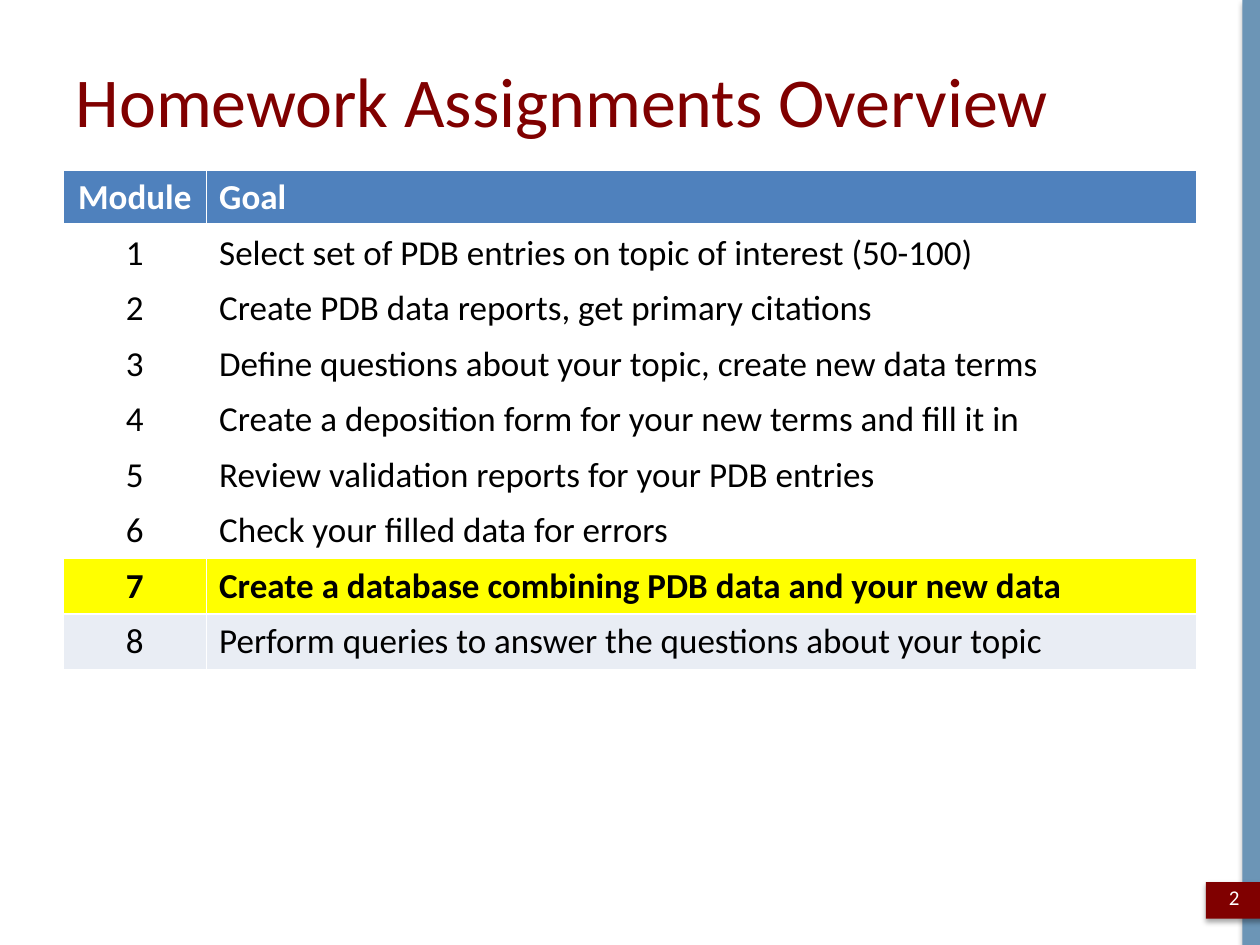
from dataclasses import dataclass
from typing import Optional

from lxml.etree import SubElement
from pptx import Presentation
from pptx.dml.color import RGBColor
from pptx.enum.shapes import MSO_SHAPE as Preset
from pptx.enum.text import MSO_ANCHOR as Anchor, PP_ALIGN as Align
from pptx.oxml.ns import qn
from pptx.util import Inches, Pt

FONT = "Calibri"
COLORS = {
    "maroon": "800000",
    "side_blue": "6C95B6",
    "header_blue": "4F81BD",
    "highlight": "FFFF00",
    "pale": "E9EDF4",
    "white": "FFFFFF",
    "black": "000000",
}


@dataclass(frozen=True)
class Block:
    left: float
    top: float
    width: float
    height: float
    color: str


@dataclass(frozen=True)
class Row:
    module: str
    goal: str
    fill: Optional[str] = None
    color: str = "black"
    bold: bool = False
    bottom_line: float = 1


BLOCKS = [
    Block(9.86, 0, 0.14, 7.5, "side_blue"),
    Block(9.57, 7, 0.48, 0.29, "maroon"),
]
ROWS = [
    Row("Module", "Goal", "header_blue", "white", True, 3),
    Row("1", "Select set of PDB entries on topic of interest (50-100)"),
    Row("2", "Create PDB data reports, get primary citations"),
    Row("3", "Define questions about your topic, create new data terms"),
    Row("4", "Create a deposition form for your new terms and fill it in"),
    Row("5", "Review validation reports for your PDB entries"),
    Row("6", "Check your filled data for errors"),
    Row("7", "Create a database combining PDB data and your new data", "highlight", bold=True),
    Row("8", "Perform queries to answer the questions about your topic", "pale"),
]
COLUMN_WIDTHS = (1.14, 7.86)


def rgb(name: str) -> RGBColor:
    return RGBColor.from_string(COLORS[name])


def write(frame, text: str, size: float, color: str, align=Align.LEFT, bold: bool = False) -> None:
    para = frame.paragraphs[0]
    para.alignment = align
    span = para.add_run()
    span.text = text
    span.font.name = FONT
    span.font.size = Pt(size)
    span.font.bold = bold
    span.font.color.rgb = rgb(color)


def add_shadow(shape) -> None:
    shape.shadow.inherit = False
    effects = shape._element.spPr.find(qn("a:effectLst"))
    shadow = SubElement(effects, qn("a:outerShdw"), blurRad=str(Pt(3.1)),
                        dist=str(Pt(1.8)), dir="5400000", rotWithShape="0")
    color = SubElement(shadow, qn("a:srgbClr"), val=COLORS["black"])
    SubElement(color, qn("a:alpha"), val="35000")


def draw_block(page, block: Block) -> None:
    shape = page.shapes.add_shape(Preset.RECTANGLE, Inches(block.left), Inches(block.top),
                                  Inches(block.width), Inches(block.height))
    shape.fill.solid()
    shape.fill.fore_color.rgb = rgb(block.color)
    shape.line.fill.background()
    add_shadow(shape)


def set_borders(cell, bottom: float) -> None:
    properties = cell._tc.get_or_add_tcPr()
    for side, width in (("L", 1), ("R", 1), ("T", 1), ("B", bottom)):
        line = SubElement(properties, qn(f"a:ln{side}"), w=str(Pt(width)))
        fill = SubElement(line, qn("a:solidFill"))
        SubElement(fill, qn("a:srgbClr"), val=COLORS["white"])


def fill_row(cells, row: Row) -> None:
    for cell, text, align in zip(cells, (row.module, row.goal), (Align.CENTER, Align.LEFT)):
        set_borders(cell, row.bottom_line)
        if row.fill:
            cell.fill.solid()
            cell.fill.fore_color.rgb = rgb(row.fill)
        else:
            cell.fill.background()
        write(cell.text_frame, text, 20, row.color, align, row.bold)


def draw_table(page) -> None:
    table = page.shapes.add_table(len(ROWS), len(COLUMN_WIDTHS), Inches(0.5), Inches(1.35),
                                  Inches(sum(COLUMN_WIDTHS)), Inches(3.9)).table
    for column, width in zip(table.columns, COLUMN_WIDTHS):
        column.width = Inches(width)
    for table_row, row in zip(table.rows, ROWS):
        fill_row(table_row.cells, row)


def main() -> None:
    deck = Presentation()
    deck.slide_width, deck.slide_height = Inches(10), Inches(7.5)
    page = deck.slides.add_slide(deck.slide_layouts[5])

    # Side bar and page number badge
    for block in BLOCKS:
        draw_block(page, block)

    # Title
    title = page.shapes.title
    title.left, title.top = Inches(0.5), Inches(0.3)
    title.width, title.height = Inches(9), Inches(0.98)
    title.text_frame.vertical_anchor = Anchor.MIDDLE
    write(title.text_frame, "Homework Assignments Overview", 40, "maroon")

    # Assignments
    draw_table(page)

    # Page number
    box = page.shapes.add_textbox(Inches(9.57), Inches(6.92), Inches(0.45), Inches(0.4))
    box.text_frame.word_wrap = True
    box.text_frame.vertical_anchor = Anchor.MIDDLE
    write(box.text_frame, "2", 12, "white", Align.CENTER)

    deck.save("out.pptx")


if __name__ == "__main__":
    main()
